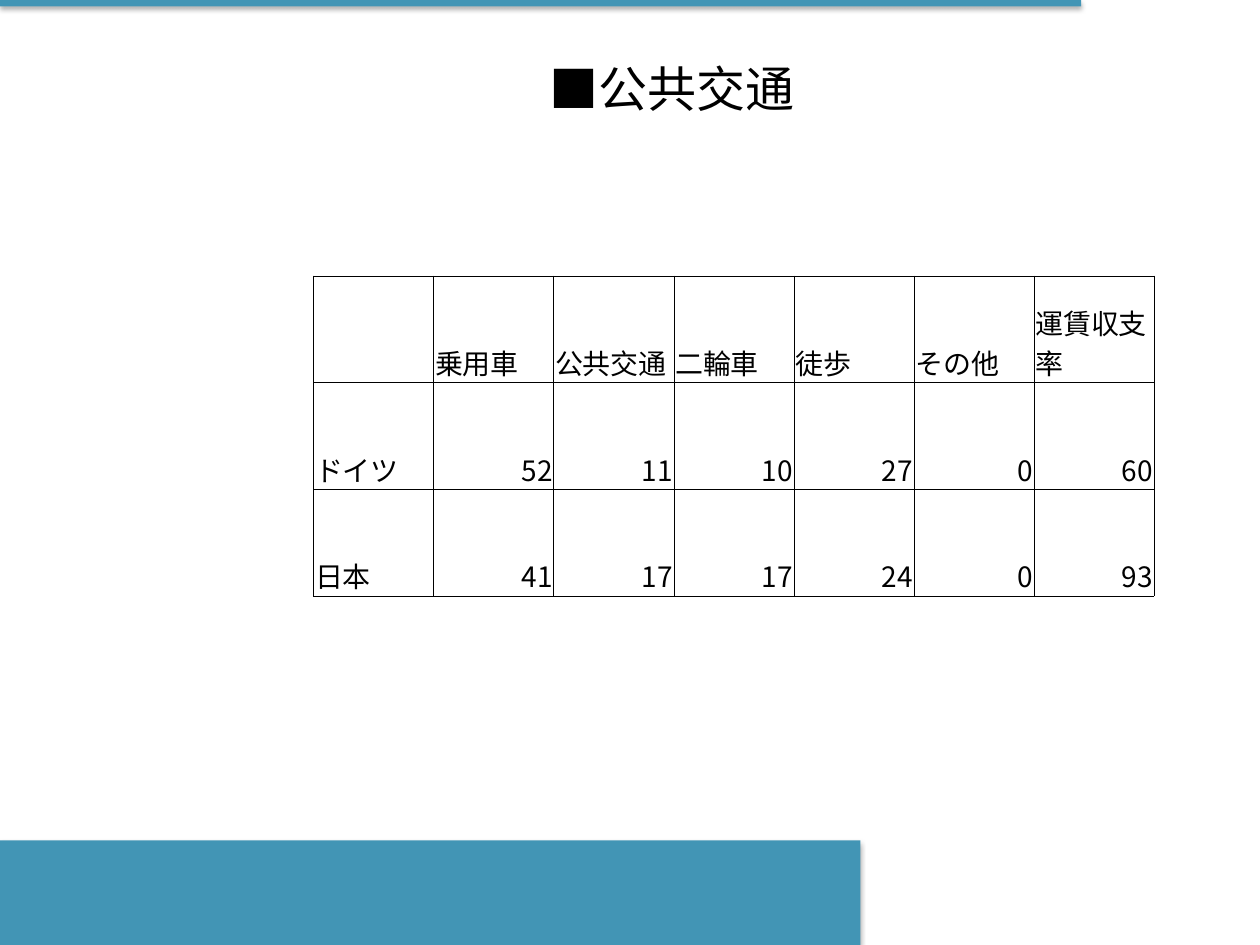
from lxml import etree
from pptx import Presentation
from pptx.dml.color import RGBColor
from pptx.enum.shapes import MSO_SHAPE
from pptx.enum.text import MSO_ANCHOR, PP_ALIGN
from pptx.oxml.ns import qn
from pptx.util import Inches, Pt

RECTANGLE = MSO_SHAPE.RECTANGLE
MIDDLE, BOTTOM = MSO_ANCHOR.MIDDLE, MSO_ANCHOR.BOTTOM
LEFT, CENTER, RIGHT = PP_ALIGN.LEFT, PP_ALIGN.CENTER, PP_ALIGN.RIGHT

COLORS = {"bar": "4295B5", "text": "000000", "border": "000000", "shadow": "000000"}
CJK_FONT = "Noto Sans CJK JP"
TITLE_FONT = "Calibri"
ROWS = [
    ["", "乗用車", "公共交通", "二輪車", "徒歩", "その他", "運賃収支率"],
    ["ドイツ", 52, 11, 10, 27, 0, 60],
    ["日本", 41, 17, 17, 24, 0, 93],
]


def rgb(name):
    """Return the named colour."""
    return RGBColor.from_string(COLORS[name])


def add_color(parent, name):
    """Add a solid colour element and return it."""
    return etree.SubElement(parent, qn("a:srgbClr"), val=COLORS[name])


def add_bar(s, x, y, w, h):
    """Add a coloured bar with a soft shadow below it."""
    sp = s.shapes.add_shape(RECTANGLE, Inches(x), Inches(y), Inches(w), Inches(h))
    sp.fill.solid()
    sp.fill.fore_color.rgb = rgb("bar")
    sp.line.fill.background()
    sp.shadow.inherit = False
    effects = sp._element.spPr.find(qn("a:effectLst"))
    shadow = etree.SubElement(effects, qn("a:outerShdw"), blurRad=str(Pt(3.1)),
                              dist=str(Pt(1.8)), dir="5400000", rotWithShape="0")
    etree.SubElement(add_color(shadow, "shadow"), qn("a:alpha"), val="35000")


def add_run(p, text, size, font, align):
    """Add one run of text to an aligned paragraph."""
    p.alignment = align
    r = p.add_run()
    r.text = text
    r.font.size = Pt(size)
    r.font.name = font
    r.font.color.rgb = rgb("text")
    etree.SubElement(r._r.get_or_add_rPr(), qn("a:ea"), typeface=CJK_FONT)


def add_title(s, text):
    """Add the centred slide title."""
    sp = s.shapes.add_textbox(Inches(1.17), Inches(0.43), Inches(8.33), Inches(0.53))
    tf = sp.text_frame
    tf.word_wrap = True
    tf.vertical_anchor = MIDDLE
    add_run(tf.paragraphs[0], text, 28, TITLE_FONT, CENTER)


def add_borders(cell):
    """Draw a thin line on all four sides of a cell."""
    tcPr = cell._tc.get_or_add_tcPr()
    for side in ("lnL", "lnR", "lnT", "lnB"):
        ln = etree.SubElement(tcPr, qn(f"a:{side}"), w=str(Pt(0.5)))
        add_color(etree.SubElement(ln, qn("a:solidFill")), "border")


def fill_cell(cell, value):
    """Style a cell and write its value, with numbers to the right."""
    add_borders(cell)
    cell.fill.background()
    cell.vertical_anchor = BOTTOM
    cell.margin_left = cell.margin_right = cell.margin_top = Inches(0.01)
    cell.margin_bottom = 0
    if value != "":
        align = RIGHT if isinstance(value, int) else LEFT
        add_run(cell.text_frame.paragraphs[0], str(value), 16, CJK_FONT, align)


def add_data_table(s, rows):
    """Add the table of transport shares."""
    frame = s.shapes.add_table(len(rows), len(rows[0]), Inches(2.49), Inches(2.19),
                               Inches(6.67), Inches(2.54))
    table = frame.table
    table.first_row = table.horz_banding = False
    for i, row in enumerate(rows):
        for j, value in enumerate(row):
            fill_cell(table.cell(i, j), value)


def main():
    """Build and save the slide."""
    prs = Presentation()
    prs.slide_width, prs.slide_height = Inches(10), Inches(7.5)
    s = prs.slides.add_slide(prs.slide_layouts[6])
    add_bar(s, 0, 6.67, 6.83, 0.83)
    add_bar(s, 0, 0, 8.58, 0.05)
    add_title(s, "■公共交通")
    add_data_table(s, ROWS)
    prs.save("out.pptx")


if __name__ == "__main__":
    main()
